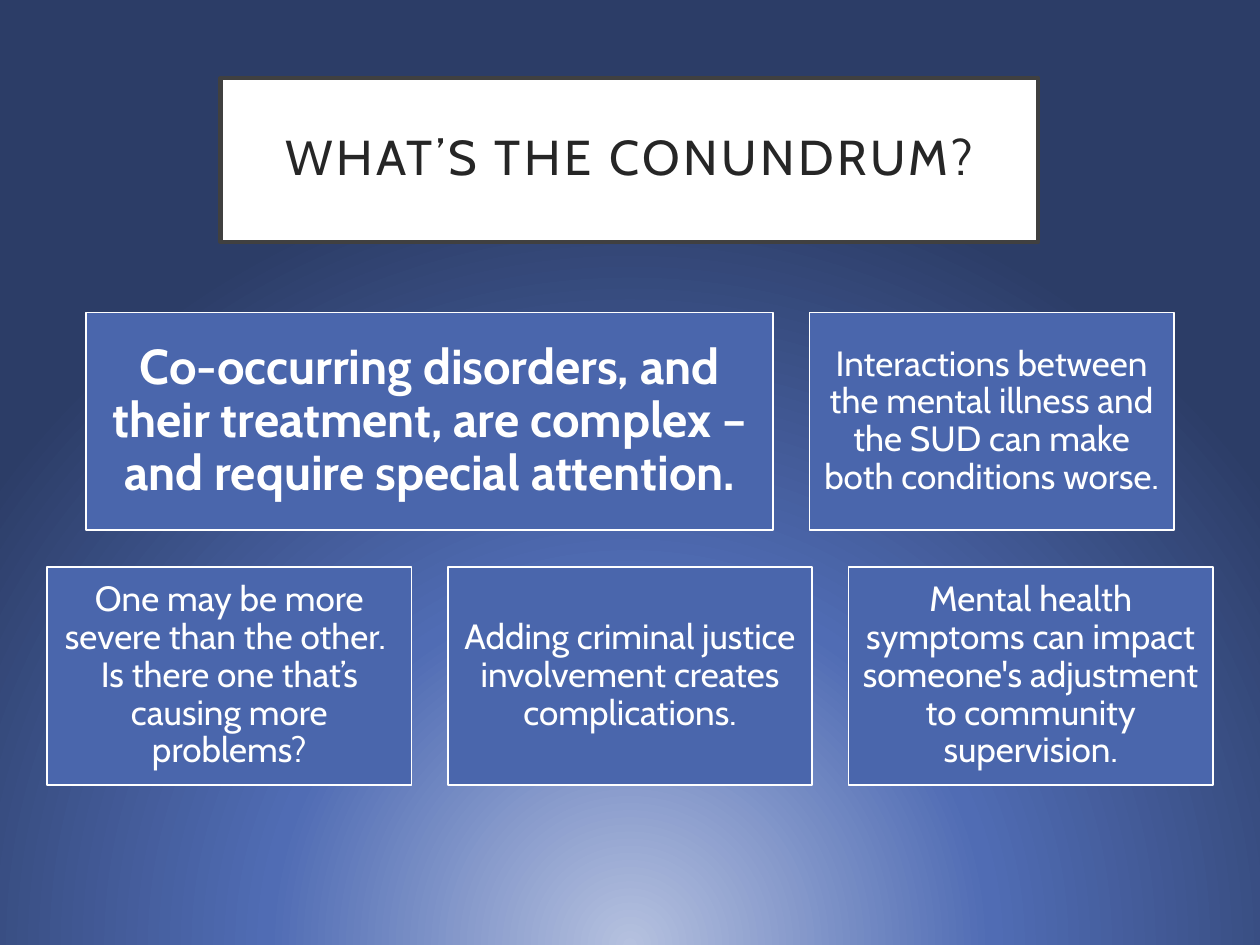
from dataclasses import dataclass

from lxml.etree import fromstring
from pptx import Presentation
from pptx.dml.color import RGBColor as RGB
from pptx.enum.shapes import MSO_SHAPE as Shape
from pptx.enum.text import MSO_ANCHOR as Anchor, PP_ALIGN as Align
from pptx.oxml.ns import nsdecls, qn
from pptx.util import Inches, Pt


@dataclass(frozen=True)
class Theme:
    font: str = "Cabin"
    white: str = "FFFFFF"
    ink: str = "262626"
    frame: str = "404040"
    card: str = "4A66AC"
    glow: tuple = ((0, "B5C1DF"), (46, "506CB4"), (100, "2C3D67"))
    big: int = 28
    small: int = 20


THEME = Theme()
WIDTH, HEIGHT = 10, 7.5
CARD_H, GAP, TOP = 1.73, 0.29, 2.48
WIDE, NARROW = 5.45, 2.89

# Each card: text, width, type size, bold, inset
ROWS = [
    [
        ("Co-occurring disorders, and their treatment, are complex – "
         "and require special attention.", WIDE, THEME.big, True, 0.12),
        ("Interactions between the mental illness and the SUD can make "
         "both conditions worse.", NARROW, THEME.small, False, 0.08),
    ],
    [
        ("One may be more severe than the other.  Is there one that’s "
         "causing more problems?", NARROW, THEME.small, False, 0.08),
        ("Adding criminal justice involvement creates complications.",
         NARROW, THEME.small, False, 0.08),
        ("Mental health symptoms can impact someone's adjustment to "
         "community supervision.", NARROW, THEME.small, False, 0.08),
    ],
]


def add_glow(slide):
    """Fill the background with a round gradient centred below the slide."""
    slide.background.fill.gradient()
    grad = slide.element.find(".//" + qn("a:gradFill"))
    stops = "".join(
        f'<a:gs pos="{pos * 1000}"><a:srgbClr val="{color}"/></a:gs>'
        for pos, color in THEME.glow)
    grad.getparent().replace(grad, fromstring(
        f'<a:gradFill {nsdecls("a")} rotWithShape="1"><a:gsLst>{stops}</a:gsLst>'
        '<a:path path="circle">'
        '<a:fillToRect l="50000" t="130000" r="50000" b="-30000"/>'
        '</a:path></a:gradFill>'))


def add_box(slide, left, top, width, height, fill, line, weight):
    box = slide.shapes.add_shape(
        Shape.RECTANGLE, Inches(left), Inches(top), Inches(width), Inches(height))
    box.shadow.inherit = False
    box.fill.solid()
    box.fill.fore_color.rgb = RGB.from_string(fill)
    box.line.color.rgb = RGB.from_string(line)
    box.line.width = Pt(weight)
    return box


def set_text(box, text, size, color, inset, bold=False, track=0):
    """Write centred text; track is the letter spacing in points."""
    frame = box.text_frame
    frame.word_wrap = True
    frame.vertical_anchor = Anchor.MIDDLE
    frame.margin_left = frame.margin_right = Inches(inset)
    frame.margin_top = frame.margin_bottom = Inches(inset)
    para = frame.paragraphs[0]
    para.alignment = Align.CENTER
    para.line_spacing = 0.9
    run = para.add_run()
    run.text = text
    font = run.font
    font.name = THEME.font
    font.size = Pt(size)
    font.bold = bold
    font.color.rgb = RGB.from_string(color)
    if track:
        run.font._element.set("spc", str(track * 100))


def add_title(slide, text):
    box = add_box(slide, 1.75, 0.62, 6.49, 1.3, THEME.white, THEME.frame, 2.5)
    set_text(box, text, THEME.big, THEME.ink, 0.2, track=2)


def add_row(slide, cards, top):
    """Place one row of cards, centred on the slide."""
    total = sum(card[1] for card in cards) + GAP * (len(cards) - 1)
    left = (WIDTH - total) / 2
    for text, width, size, bold, inset in cards:
        box = add_box(slide, left, top, width, CARD_H, THEME.card, THEME.white, 1)
        set_text(box, text, size, THEME.white, inset, bold=bold)
        left += width + GAP


def main():
    deck = Presentation()
    deck.slide_width, deck.slide_height = Inches(WIDTH), Inches(HEIGHT)
    slide = deck.slides.add_slide(deck.slide_layouts[6])
    add_glow(slide)
    add_title(slide, "WHAT’S THE CONUNDRUM?")
    for index, cards in enumerate(ROWS):
        add_row(slide, cards, TOP + index * (CARD_H + GAP))
    deck.save("out.pptx")


if __name__ == "__main__":
    main()
